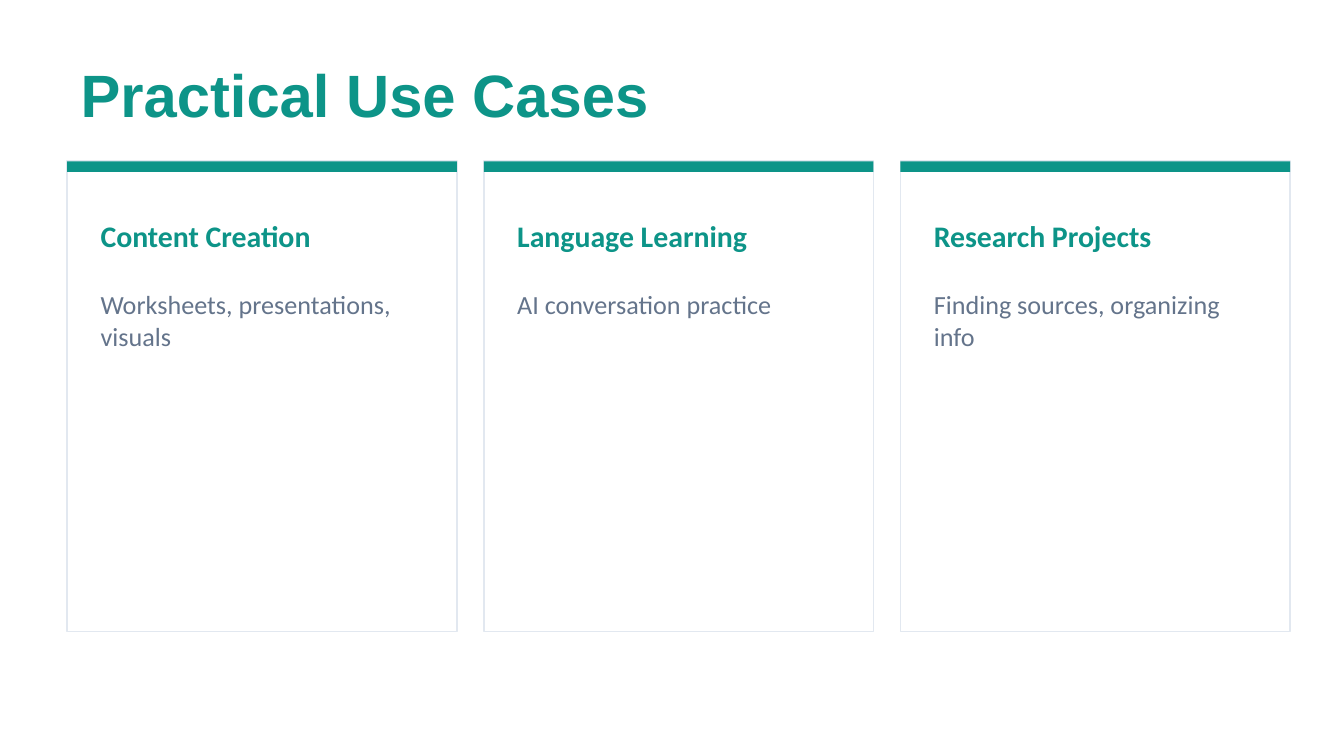
from pptx import Presentation
from pptx.dml.color import RGBColor
from pptx.enum.shapes import MSO_SHAPE
from pptx.enum.text import MSO_ANCHOR, MSO_AUTO_SIZE, PP_ALIGN
from pptx.util import Pt

RECT = MSO_SHAPE.RECTANGLE
TOP, MIDDLE = MSO_ANCHOR.TOP, MSO_ANCHOR.MIDDLE
NO_FIT = MSO_AUTO_SIZE.NONE
LEFT = PP_ALIGN.LEFT
PX = 914400 // 200
COLORS = {"teal": "0D9488", "white": "FFFFFF", "border": "E2E8F0", "slate": "64748B"}
RGB = {name: RGBColor.from_string(value) for name, value in COLORS.items()}

TITLE = {"name": "Arial", "size": Pt(32), "bold": True}
HEADING = {"name": "Calibri", "size": Pt(16), "bold": True}
BODY = {"name": "Calibri", "size": Pt(14), "bold": False}

CARDS = [
    ("Content Creation", "Worksheets, presentations, visuals"),
    ("Language Learning", "AI conversation practice"),
    ("Research Projects", "Finding sources, organizing info"),
]
CARD_X, CARD_Y, CARD_W, CARD_H = 100, 240, 580, 700
GAP, BAR_H, PAD = 40, 16, 30


def write(s, text, font, color, anchor):
    tf = s.text_frame
    tf.word_wrap = True
    tf.auto_size = NO_FIT
    tf.vertical_anchor = anchor
    p = tf.paragraphs[0]
    p.alignment = LEFT
    r = p.add_run()
    r.text = text
    for key, value in font.items():
        setattr(r.font, key, value)
    r.font.color.rgb = RGB[color]


def add_rect(x, y, w, h, fill):
    sp = s.shapes.add_shape(RECT, x * PX, y * PX, w * PX, h * PX)
    sp.shadow.inherit = False
    sp.fill.solid()
    sp.fill.fore_color.rgb = RGB[fill]
    sp.line.fill.background()
    return sp


prs = Presentation()
prs.slide_width, prs.slide_height = 2000 * PX, 1125 * PX
s = prs.slides.add_slide(prs.slide_layouts[5])
s.background.fill.solid()
s.background.fill.fore_color.rgb = RGB["white"]

title = s.shapes.title
title.left, title.top, title.width, title.height = 100 * PX, 80 * PX, 1800 * PX, 120 * PX
write(title, "Practical Use Cases", TITLE, "teal", MIDDLE)

for i, (heading, body) in enumerate(CARDS):
    x = CARD_X + i * (CARD_W + GAP)
    card = add_rect(x, CARD_Y, CARD_W, CARD_H, "white")
    card.line.color.rgb = RGB["border"]
    card.line.width = Pt(1)
    add_rect(x, CARD_Y, CARD_W, BAR_H, "teal")
    for text, y, h, font, color, anchor in (
        (heading, 300, 100, HEADING, "teal", MIDDLE),
        (body, 420, 480, BODY, "slate", TOP),
    ):
        tb = s.shapes.add_textbox((x + PAD) * PX, y * PX, (CARD_W - 2 * PAD) * PX, h * PX)
        write(tb, text, font, color, anchor)

prs.save("out.pptx")
